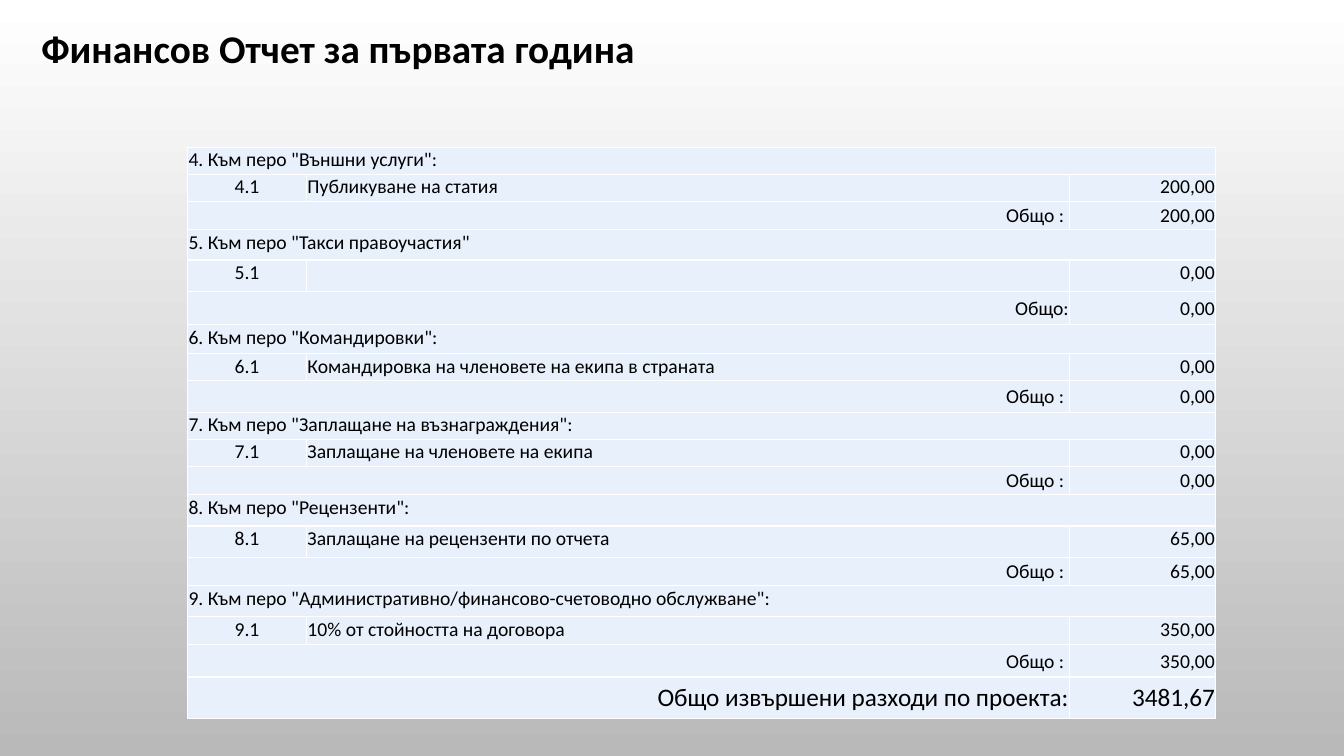
from lxml import etree
from pptx import Presentation
from pptx.dml.color import RGBColor
from pptx.enum import text
from pptx.oxml.ns import qn
from pptx.util import Inches, Pt

TITLE = "Финансов Отчет за първата година"
# heading, item number, item name, amount, total label
SECTIONS = [
    ('4. Към перо "Външни услуги":', "4.1", "Публикуване на статия", "200,00", "Общо : "),
    ('5. Към перо "Такси правоучастия"', "5.1", "", "0,00", "Общо:"),
    ('6. Към перо "Командировки":', "6.1",
     "Командировка на членовете на екипа в страната", "0,00", "Общо : "),
    ('7. Към перо "Заплащане на възнаграждения":', "7.1",
     "Заплащане на членовете на екипа", "0,00", "Общо : "),
    ('8. Към перо "Рецензенти":', "8.1", "Заплащане на рецензенти по отчета", "65,00", "Общо : "),
    ('9. Към перо "Административно/финансово-счетоводно обслужване":', "9.1",
     "10% от стойността на договора", "350,00", "Общо : "),
]
GRAND_TOTAL = ("Общо извършени разходи по проекта:", "3481,67")
COL_WIDTHS = [1.18, 7.57, 1.45]
ROW_HEIGHTS = [0.27, 0.27, 0.28, 0.3, 0.31, 0.33, 0.29, 0.27, 0.31, 0.27,
               0.27, 0.28, 0.31, 0.31, 0.28, 0.31, 0.28, 0.32, 0.41]
COLORS = {"text": "000000", "cell": "E8F0FC", "border": "FFFFFF",
          "bg_top": "FFFFFF", "bg_bottom": "B9B9B9"}
CELL_MARGINS = {"margin_left": 0.01, "margin_right": 0.01, "margin_top": 0.01, "margin_bottom": 0}
LEFT, CENTER, RIGHT = text.PP_ALIGN.LEFT, text.PP_ALIGN.CENTER, text.PP_ALIGN.RIGHT
TOP, MIDDLE = text.MSO_ANCHOR.TOP, text.MSO_ANCHOR.MIDDLE


def rgb(name):
    return RGBColor.from_string(COLORS[name])


def write(p, content, size, align, bold=False):
    p.alignment = align
    r = p.add_run()
    r.text = content
    for key, value in {"name": "Calibri", "size": Pt(size), "bold": bold}.items():
        setattr(r.font, key, value)
    r.font.color.rgb = rgb("text")


def style_cell(cell):
    """Set the margins, fill and four borders of a cell."""
    for key, value in CELL_MARGINS.items():
        setattr(cell, key, Inches(value))
    cell.fill.solid()
    cell.fill.fore_color.rgb = rgb("cell")
    tc_pr = cell._tc.get_or_add_tcPr()
    for i, side in enumerate(("a:lnL", "a:lnR", "a:lnT", "a:lnB")):
        ln = etree.Element(qn(side), w=str(Pt(1)))
        solid = etree.SubElement(ln, qn("a:solidFill"))
        etree.SubElement(solid, qn("a:srgbClr"), val=COLORS["border"])
        tc_pr.insert(i, ln)


def fill_cell(cell, content, align, anchor=TOP, size=14):
    cell.vertical_anchor = anchor
    write(cell.text_frame.paragraphs[0], content, size, align)


def fill_total(table, row, label, amount, size=14):
    table.cell(row, 0).merge(table.cell(row, 1))
    fill_cell(table.cell(row, 0), label, RIGHT, MIDDLE, size)
    fill_cell(table.cell(row, 2), amount, RIGHT, MIDDLE, size)


prs = Presentation()
prs.slide_width, prs.slide_height = Inches(13.33), Inches(7.5)
s = prs.slides.add_slide(prs.slide_layouts[5])

bg = s.background.fill
bg.gradient()
bg.gradient_angle = 270
for stop, name, position in zip(bg.gradient_stops, ("bg_top", "bg_bottom"), (0, 1)):
    stop.color.rgb = rgb(name)
    stop.position = position

title = s.shapes.title
title.left, title.top, title.width, title.height = map(Inches, (0.23, 0.19, 9.35, 0.57))
tf = title.text_frame
for key, value in {"word_wrap": True, "auto_size": text.MSO_AUTO_SIZE.SHAPE_TO_FIT_TEXT,
                   "vertical_anchor": TOP, "margin_left": Inches(0.18)}.items():
    setattr(tf, key, value)
write(tf.paragraphs[0], TITLE, 28, LEFT, True)

frame = s.shapes.add_table(len(ROW_HEIGHTS), len(COL_WIDTHS), Inches(1.86), Inches(1.46),
                           Inches(sum(COL_WIDTHS)), Inches(sum(ROW_HEIGHTS)))
table = frame.table
table.first_row = table.horz_banding = False
for column, width in zip(table.columns, COL_WIDTHS):
    column.width = Inches(width)
for row, height in zip(table.rows, ROW_HEIGHTS):
    row.height = Inches(height)
for cell in table.iter_cells():
    style_cell(cell)

for i, (heading, number, item, amount, total_label) in enumerate(SECTIONS):
    first = 3 * i
    table.cell(first, 0).merge(table.cell(first, 2))
    fill_cell(table.cell(first, 0), heading, LEFT)
    for col, (content, align) in enumerate(((number, CENTER), (item, LEFT), (amount, RIGHT))):
        if content:
            fill_cell(table.cell(first + 1, col), content, align)
    fill_total(table, first + 2, total_label, amount)
fill_total(table, 3 * len(SECTIONS), *GRAND_TOTAL, size=18)

prs.save("out.pptx")
